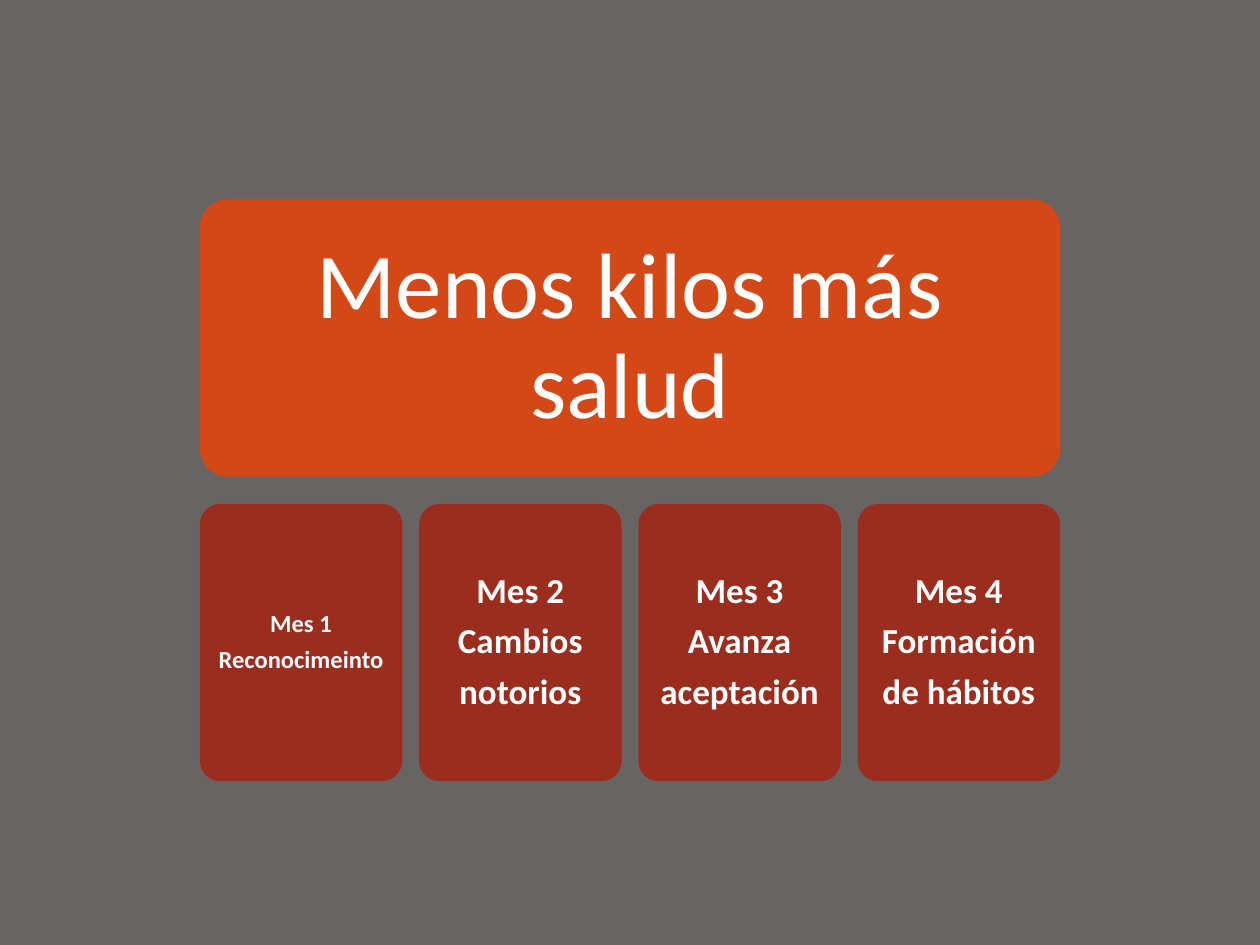
"""Build the slide with the programme title and its four monthly stages."""
from pptx import Presentation
from pptx.dml.color import RGBColor
from pptx.enum.shapes import MSO_SHAPE
from pptx.enum.text import MSO_ANCHOR, MSO_AUTO_SIZE, PP_ALIGN
from pptx.util import Cm, Pt

ROUNDED = MSO_SHAPE.ROUNDED_RECTANGLE
MIDDLE = MSO_ANCHOR.MIDDLE
NO_FIT = MSO_AUTO_SIZE.NONE
CENTER = PP_ALIGN.CENTER

GRAY = RGBColor(0x69, 0x64, 0x64)
ORANGE = RGBColor(0xD3, 0x48, 0x17)
RED = RGBColor(0x9B, 0x2D, 0x1F)
WHITE = RGBColor(0xFF, 0xFF, 0xFF)

LEFT, WIDTH, HEIGHT = 4.03, 17.34, 5.59
TITLE_TOP, STAGE_TOP = 4.02, 10.16
STAGE_WIDTH, STAGE_STEP = 4.08, 4.42

STAGES = [
    ("Mes 1\nReconocimeinto", 14, 0.15),
    ("Mes 2\nCambios\nnotorios", 20, 0.2),
    ("Mes 3\nAvanza\naceptación", 20, 0.2),
    ("Mes 4\nFormación\nde hábitos", 20, 0.2),
]


def add_box(s, left, top, width, color):
    sp = s.shapes.add_shape(ROUNDED, Cm(left), Cm(top), Cm(width), Cm(HEIGHT))
    sp.adjustments[0] = 0.1
    sp.shadow.inherit = False
    sp.fill.solid()
    sp.fill.fore_color.rgb = color
    sp.line.fill.background()
    return sp


def write(sp, text, size=20, bold=False, inset=0.2):
    tf = sp.text_frame
    tf.text = text
    tf.word_wrap = True
    tf.auto_size = NO_FIT
    tf.vertical_anchor = MIDDLE
    tf.margin_left = tf.margin_right = Cm(inset)
    tf.margin_top = tf.margin_bottom = Cm(inset)
    for p in tf.paragraphs:
        p.alignment = CENTER
        p.line_spacing = 0.9
        p.space_before = Pt(0)
        p.space_after = Pt(0.35 * size)
        for r in p.runs:
            r.font.name = "Calibri"
            r.font.size = Pt(size)
            r.font.bold = bold
            r.font.color.rgb = WHITE


prs = Presentation()
prs.slide_width, prs.slide_height = Cm(25.4), Cm(19.05)
s = prs.slides.add_slide(prs.slide_layouts[5])
s.background.fill.solid()
s.background.fill.fore_color.rgb = GRAY

add_box(s, LEFT, TITLE_TOP, WIDTH, ORANGE)
title = s.shapes.title
title.left, title.top = Cm(LEFT), Cm(TITLE_TOP)
title.width, title.height = Cm(WIDTH), Cm(HEIGHT)
write(title, "Menos kilos más salud", size=53, inset=0.56)
s.shapes._spTree.append(title._element)

for i, (text, size, inset) in enumerate(STAGES):
    sp = add_box(s, LEFT + i * STAGE_STEP, STAGE_TOP, STAGE_WIDTH, RED)
    write(sp, text, size=size, bold=True, inset=inset)

prs.save("out.pptx")
